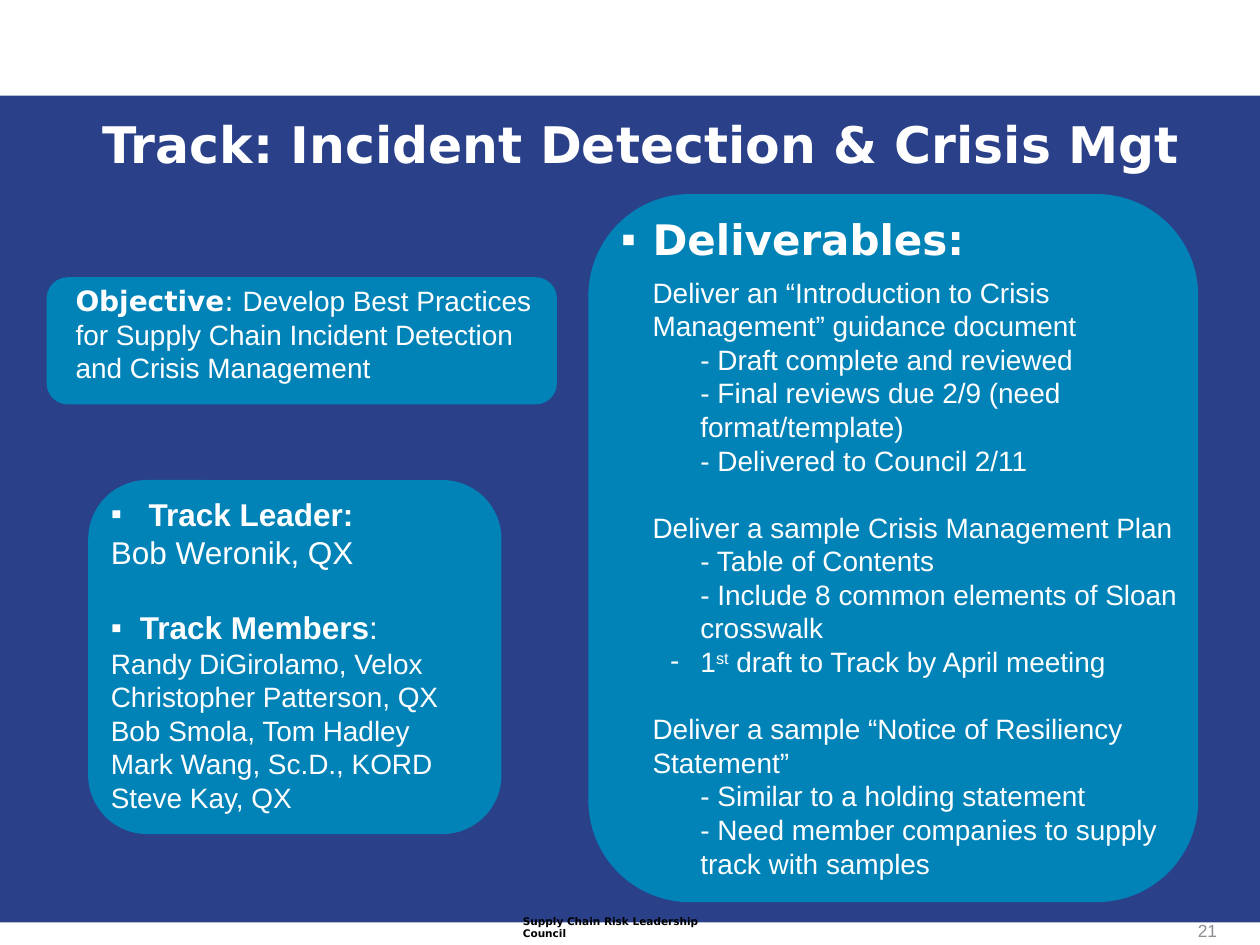
from lxml.etree import SubElement
from pptx import Presentation
from pptx.dml.color import RGBColor
from pptx.enum.shapes import MSO_SHAPE
from pptx.enum.text import MSO_ANCHOR, PP_ALIGN
from pptx.oxml.ns import qn
from pptx.util import Inches, Pt

NAVY = RGBColor(0x2A, 0x41, 0x8A)
TEAL = RGBColor(0x01, 0x83, 0xB7)
WHITE = RGBColor(0xFF, 0xFF, 0xFF)
BLACK = RGBColor(0, 0, 0)
GRAY = RGBColor(0x8E, 0x8E, 0x95)

HEADING = {"name": "DejaVu Sans", "size": Pt(16), "bold": True}
BODY = {"name": "Arial", "size": Pt(16), "bold": False}
LARGE = BODY | {"size": Pt(18)}
LARGE_BOLD = LARGE | {"bold": True}
FRAME_INSETS = (0.09, 0.04, 0.09, 0.04)


def add_panel(page, box, color, shape_type=MSO_SHAPE.ROUNDED_RECTANGLE):
    panel = page.shapes.add_shape(shape_type, *map(Inches, box))
    panel.shadow.inherit = False
    panel.fill.solid()
    panel.fill.fore_color.rgb = color
    panel.line.fill.background()


def add_frame(page, box, insets=(0, 0, 0, 0), anchor=MSO_ANCHOR.TOP):
    frame = page.shapes.add_textbox(*map(Inches, box)).text_frame
    frame.word_wrap = True
    frame.vertical_anchor = anchor
    for side, inset in zip(("left", "top", "right", "bottom"), insets):
        setattr(frame, f"margin_{side}", Inches(inset))
    return frame


def add_para(frame, spans, color=WHITE, margin=0, hang=0, bullet=None, **formats):
    """Write a paragraph of (text, font values) spans."""
    first = not frame.paragraphs[0].runs
    para = frame.paragraphs[0] if first else frame.add_paragraph()
    properties = para._p.get_or_add_pPr()
    properties.set("marL", str(Inches(margin)))
    properties.set("indent", str(-Inches(hang)))
    if bullet:
        SubElement(properties, qn("a:buFont"), typeface="Arial")
        SubElement(properties, qn("a:buChar"), char=bullet)
    for name, value in formats.items():
        setattr(para, name, value)
    for text, font_values in spans:
        span = para.add_run()
        span.text = text
        span.font.color.rgb = color
        for name, value in font_values.items():
            if name == "baseline":
                span.font._rPr.set(name, value)
            else:
                setattr(span.font, name, value)


def add_bands(page):
    # White bands, footer and page number
    for box in ((0, 7.32, 10, 0.18), (0, 0, 10, 0.76)):
        add_panel(page, box, WHITE, MSO_SHAPE.RECTANGLE)
    footer = add_frame(page, (4.06, 7.31, 1.93, 0.19), FRAME_INSETS, MSO_ANCHOR.BOTTOM)
    add_para(footer, [("Supply Chain Risk Leadership Council", HEADING | {"size": Pt(6)})], BLACK)
    number = add_frame(page, (9.4, 7.25, 0.35, 0.26), FRAME_INSETS, MSO_ANCHOR.BOTTOM)
    add_para(number, [("21", BODY | {"size": Pt(10)})], GRAY, alignment=PP_ALIGN.RIGHT)


def add_title(page, box):
    frame = add_frame(page, box, (0.09, 0.04, 0.09, 0.14), MSO_ANCHOR.MIDDLE)
    add_para(frame, [("Track: Incident Detection & Crisis Mgt", HEADING | {"size": Pt(28.8)})],
             line_spacing=0.9)


def add_objective(page, box):
    left, top, width, height = box
    add_panel(page, box, TEAL)
    frame = add_frame(page, (left + 0.23, top + 0.05, width - 0.41, 0.53))
    add_para(frame, [
        ("Objective", HEADING),
        (": ", HEADING | {"bold": False}),
        ("Develop Best Practices for Supply Chain Incident Detection and Crisis Management", BODY),
    ])


def add_team(page, box):
    left, top, width, height = box
    add_panel(page, box, TEAL)
    frame = add_frame(page, (left + 0.18, top + 0.12, width - 0.19, height - 0.2))
    add_para(frame, [("Track Leader:", LARGE_BOLD)], margin=0.3, hang=0.3, bullet="▪")
    add_para(frame, [("Bob Weronik, QX", LARGE)])
    add_para(frame, [("Track Members", LARGE_BOLD), (":", LARGE)],
             margin=0.23, hang=0.23, bullet="▪", space_before=Pt(21.5))
    for member in ("Randy DiGirolamo, Velox", "Christopher Patterson, QX",
                   "Bob Smola, Tom Hadley", "Mark Wang, Sc.D., KORD", "Steve Kay, QX"):
        add_para(frame, [(member, BODY)])


def add_deliverables(page, box):
    left, top, width, height = box
    add_panel(page, box, TEAL)
    frame = add_frame(page, (left + 0.26, top + 0.18, width - 0.24, height - 0.11))
    add_para(frame, [("Deliverables:", HEADING | {"size": Pt(24)})], margin=0.25, hang=0.25,
             bullet="▪", line_spacing=0.95, space_after=Pt(6))
    draft = [("1", BODY), ("st", BODY | {"baseline": "30000"}),
             (" draft to Track by April meeting", BODY)]
    groups = (
        ("Deliver an “Introduction to Crisis Management” guidance document",
         ("- Draft complete and reviewed", "- Final reviews due 2/9 (need format/template)",
          "- Delivered to Council 2/11")),
        ("Deliver a sample Crisis Management Plan",
         ("- Table of Contents", "- Include 8 common elements of Sloan crosswalk", draft)),
        ("Deliver a sample “Notice of Resiliency Statement”",
         ("- Similar to a holding statement",
          "- Need member companies to supply track with samples")),
    )
    for index, (deliverable, steps) in enumerate(groups):
        add_para(frame, [(deliverable, BODY)], margin=0.25,
                 space_before=Pt(19.2 if index else 0))
        for step in steps:
            if step is draft:
                add_para(frame, draft, margin=0.63, hang=0.24, bullet="-")
            else:
                add_para(frame, [(step, BODY)], margin=0.63)


def main():
    deck = Presentation()
    deck.slide_width, deck.slide_height = Inches(10), Inches(7.5)
    page = deck.slides.add_slide(deck.slide_layouts[6])
    page.background.fill.solid()
    page.background.fill.fore_color.rgb = NAVY
    add_bands(page)
    add_title(page, (0.72, 0.89, 8.84, 0.66))
    add_deliverables(page, (4.67, 1.54, 4.84, 5.62))
    add_team(page, (0.7, 3.81, 3.28, 2.81))
    add_objective(page, (0.37, 2.2, 4.05, 1.01))
    deck.save("out.pptx")


if __name__ == "__main__":
    main()
